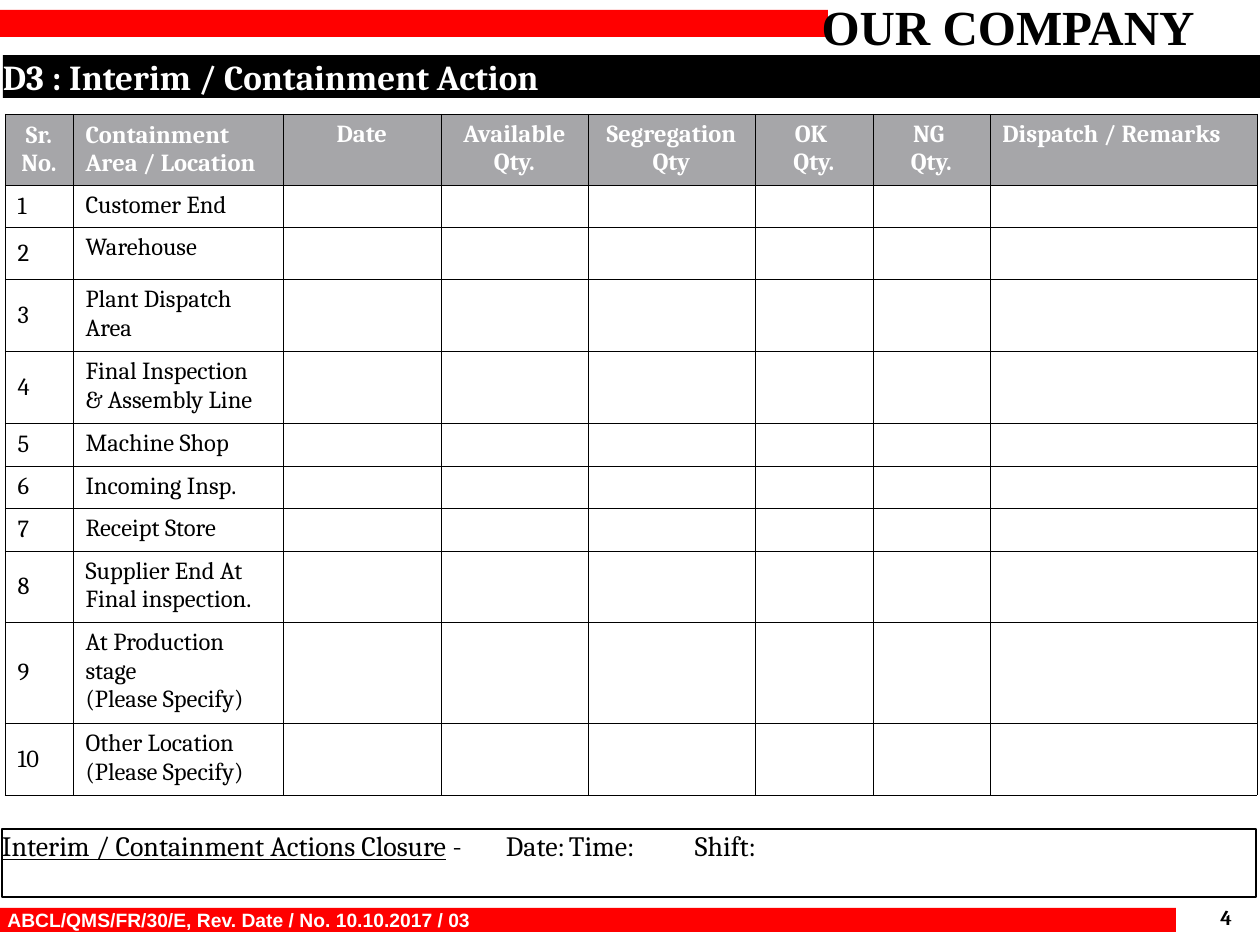
"""Build the D3 interim / containment action slide."""
from dataclasses import dataclass

from lxml import etree
from pptx import Presentation
from pptx import util as u
from pptx.dml.color import RGBColor
from pptx.enum import shapes, text
from pptx.oxml import ns


@dataclass(frozen=True)
class Theme:
    black: str = "000000"
    white: str = "FFFFFF"
    red: str = "FF0000"
    grey: str = "A6A6A9"
    serif: str = "Cambria"
    sans: str = "Arial"
    brand: str = "Times New Roman"
    brand_size: int = 28
    title_size: int = 20
    closure_size: int = 16
    table_size: int = 14
    page_size: int = 12
    footer_size: int = 11


theme = Theme()
EMU_PER_PX = 914400 / 126
LEFT, CENTER, RIGHT = text.PP_ALIGN.LEFT, text.PP_ALIGN.CENTER, text.PP_ALIGN.RIGHT


def px(*lengths):
    return [u.Emu(round(length * EMU_PER_PX)) for length in lengths]


def write(frame, content, size, color, font=theme.serif, bold=True, align=LEFT, inset=None):
    frame.word_wrap = True
    frame.text = content
    if inset is not None:
        frame.margin_left = frame.margin_right = frame.margin_top = frame.margin_bottom = inset
    for paragraph in frame.paragraphs:
        paragraph.alignment = align
        paragraph.font.size = u.Pt(size)
        paragraph.font.name = font
        paragraph.font.bold = bold
        paragraph.font.color.rgb = RGBColor.from_string(color)


presentation = Presentation()
presentation.slide_width, presentation.slide_height = u.Inches(10), u.Inches(7.5)
slide = presentation.slides.add_slide(presentation.slide_layouts[5])

for box in ((-1, 10, 829, 27), (0, 908, 1176, 24)):
    bar = slide.shapes.add_shape(shapes.MSO_SHAPE.RECTANGLE, *px(*box))
    bar.shadow.inherit = False
    bar.fill.solid()
    bar.fill.fore_color.rgb = RGBColor.from_string(theme.red)
    bar.line.fill.background()

labels = (
    ((798, -10, 420, 73), "OUR COMPANY", theme.brand_size, theme.black, theme.brand, CENTER, None),
    ((-5, 902, 1133, 37), "ABCL/QMS/FR/30/E, Rev. Date / No. 10.10.2017 / 03",
     theme.footer_size, theme.white, theme.sans, LEFT, None),
    ((1164, 905, 68, 25), "4", theme.page_size, theme.black, theme.serif, RIGHT, 0),
)
for box, content, size, color, font, align, inset in labels:
    label = slide.shapes.add_textbox(*px(*box))
    write(label.text_frame, content, size, color, font, align=align, inset=inset)

title = slide.shapes.title
title.left, title.top, title.width, title.height = px(3, 55, 1257, 43)
title.fill.solid()
title.fill.fore_color.rgb = RGBColor.from_string(theme.black)
write(title.text_frame, "D3 : Interim / Containment Action", theme.title_size, theme.white, inset=0)
title.text_frame.auto_size = text.MSO_AUTO_SIZE.NONE
title.text_frame.vertical_anchor = text.MSO_ANCHOR.TOP

headers = ("Sr. No.", "Containment Area / Location", "Date", "Available Qty.",
           "Segregation Qty", "OK \nQty.", "NG \nQty.", "Dispatch / Remarks")
locations = ("Customer End", "Warehouse", "Plant Dispatch Area",
             "Final Inspection & Assembly Line", "Machine Shop", "Incoming Insp.",
             "Receipt Store", "Supplier End At Final inspection.",
             "At Production stage\n(Please Specify)", "Other Location\n(Please Specify)")
column_widths = (68, 210, 158, 147, 167, 118, 117, 267)
row_heights = (71, 42, 52, 72, 71, 43, 42, 43, 71, 101, 71)
rows = [headers] + [(str(number), location) + ("",) * 6
                    for number, location in enumerate(locations, 1)]

table_box = px(5, 114, sum(column_widths), sum(row_heights))
table = slide.shapes.add_table(len(rows), len(headers), *table_box).table
for column, width in zip(table.columns, px(*column_widths)):
    column.width = width
for row, height in zip(table.rows, px(*row_heights)):
    row.height = height

for row_index, row in enumerate(rows):
    is_header = row_index == 0
    for column_index, content in enumerate(row):
        cell = table.cell(row_index, column_index)
        centered = is_header and column_index not in (1, 7)
        write(cell.text_frame, content, theme.table_size,
              theme.white if is_header else theme.black,
              bold=is_header, align=CENTER if centered else LEFT)
        if column_index == 0 or (is_header and column_index == 1):
            cell.vertical_anchor = text.MSO_ANCHOR.MIDDLE
        properties = cell._tc.get_or_add_tcPr()
        for side in ("lnL", "lnR", "lnT", "lnB"):
            border = etree.SubElement(properties, ns.qn(f"a:{side}"), w=str(u.Pt(0.25)))
            fill = etree.SubElement(border, ns.qn("a:solidFill"))
            etree.SubElement(fill, ns.qn("a:srgbClr"), val=theme.black)
        if is_header:
            cell.fill.solid()
            cell.fill.fore_color.rgb = RGBColor.from_string(theme.grey)
        else:
            cell.fill.background()

closure = slide.shapes.add_shape(shapes.MSO_SHAPE.RECTANGLE, *px(2, 829, 1254, 68))
closure.shadow.inherit = False
closure.fill.background()
closure.line.color.rgb = RGBColor.from_string(theme.black)
closure.line.width = u.Pt(0.75)
closure.text_frame.vertical_anchor = text.MSO_ANCHOR.TOP
paragraph = closure.text_frame.paragraphs[0]
tab_list = etree.SubElement(paragraph._p.get_or_add_pPr(), ns.qn("a:tabLst"))
for position in px(497, 697, 878):
    etree.SubElement(tab_list, ns.qn("a:tab"), pos=str(position), algn="l")
write(closure.text_frame, "Interim / Containment Actions Closure", theme.closure_size,
      theme.black, bold=False, inset=0)
paragraph = closure.text_frame.paragraphs[0]
paragraph.runs[0].font.underline = True
paragraph.add_run().text = " -\tDate:\tTime:\tShift:"

presentation.save("out.pptx")
